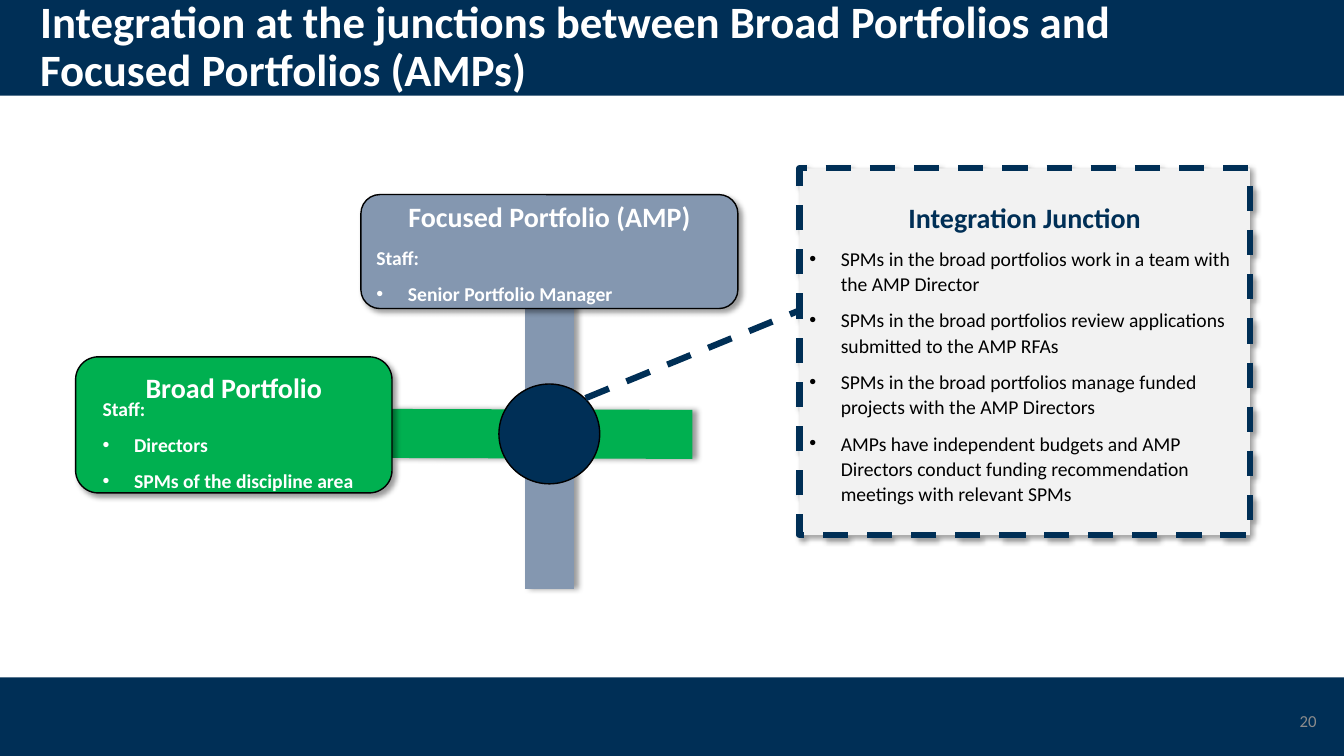
from lxml import etree
from pptx import Presentation
from pptx.dml.color import RGBColor
from pptx.enum import dml, shapes, text
from pptx.oxml import ns
from pptx.util import Pt

COLORS = {"navy": "002F56", "slate": "8497B0", "green": "00B050", "panel": "F2F2F2",
          "white": "FFFFFF", "black": "000000", "number": "8C8C8C"}
WIDTH, HEIGHT = 960, 540
FONT = "Calibri"
BANDS = [(0, 68.4), (483.84, 56.16)]
TITLE = "Integration at the junctions between Broad Portfolios and Focused Portfolios (AMPs)"
JUNCTION = ("Integration Junction", [
    "SPMs in the broad portfolios work in a team with the AMP Director",
    "SPMs in the broad portfolios review applications submitted to the AMP RFAs",
    "SPMs in the broad portfolios manage funded projects with the AMP Directors",
    "AMPs have independent budgets and AMP Directors conduct funding recommendation "
    "meetings with relevant SPMs"])
FOCUSED = ("Focused Portfolio (AMP)", ["Senior Portfolio Manager"])
BROAD = ("Broad Portfolio", ["Directors", "SPMs of the discipline area"])
ALIGN = text.PP_ALIGN
ANCHOR = text.MSO_ANCHOR
KIND = shapes.MSO_SHAPE


def color(name):
    """Return the named palette colour."""
    return RGBColor.from_string(COLORS[name])


def set_effects(shape, direction=None):
    """Replace inherited effects with none, or with a soft shadow."""
    effects = etree.SubElement(shape._element.spPr, ns.qn("a:effectLst"))
    if direction is not None:
        shadow = etree.SubElement(effects, ns.qn("a:outerShdw"), blurRad=str(Pt(4)),
                                  dist=str(Pt(3)), dir=str(direction * 60000),
                                  algn="tl", rotWithShape="0")
        tint = etree.SubElement(shadow, ns.qn("a:srgbClr"), val=COLORS["black"])
        etree.SubElement(tint, ns.qn("a:alpha"), val="40000")


def set_line(shape, name, width, dashed=False):
    """Style the outline of a shape or a connector."""
    shape.line.color.rgb = color(name)
    shape.line.width = Pt(width)
    if dashed:
        shape.line.dash_style = dml.MSO_LINE.DASH


def add_block(parent, kind, box, fill, line=None, shadow=None):
    """Add a filled shape; line holds colour, width and dash flag."""
    shape = parent.shapes.add_shape(kind, *map(Pt, box))
    shape.fill.solid()
    shape.fill.fore_color.rgb = color(fill)
    if line:
        set_line(shape, *line)
    else:
        shape.line.fill.background()
    set_effects(shape, shadow)
    return shape


def add_line(slide, start, end, line, shadow=None):
    """Add a straight connector between two points."""
    connector = slide.shapes.add_connector(shapes.MSO_CONNECTOR.STRAIGHT,
                                           *map(Pt, start + end))
    set_line(connector, *line)
    set_effects(connector, shadow)


def write(shape, words, size=14, ink="white", bold=True, align=ALIGN.LEFT,
          anchor=ANCHOR.MIDDLE, spacing=1.07, after=8, bullet=False):
    """Append one formatted paragraph to a shape."""
    frame = shape.text_frame
    frame.word_wrap = True
    frame.vertical_anchor = anchor
    paragraph = frame.paragraphs[0]
    if paragraph.runs:
        paragraph = frame.add_paragraph()
    paragraph.alignment = align
    paragraph.line_spacing = spacing
    paragraph.space_after = Pt(after)
    if bullet:
        properties = paragraph._p.get_or_add_pPr()
        properties.set("marL", str(Pt(22.5)))
        properties.set("indent", str(Pt(-22.5)))
        etree.SubElement(properties, ns.qn("a:buFont"), typeface="Arial")
        etree.SubElement(properties, ns.qn("a:buChar"), char="•")
    run = paragraph.add_run()
    run.text = words
    run.font.name = FONT
    run.font.size = Pt(size)
    run.font.bold = bold
    run.font.color.rgb = color(ink)


def write_staff(shape, members, **layout):
    """Write the staff label and its bulleted members."""
    write(shape, "Staff:", **layout)
    for member in members:
        write(shape, member, bullet=True, **layout)


def build():
    """Build the slide and save it."""
    presentation = Presentation()
    presentation.slide_width, presentation.slide_height = Pt(WIDTH), Pt(HEIGHT)
    slide = presentation.slides.add_slide(presentation.slide_layouts[6])
    for top, height in BANDS:
        add_block(slide, KIND.RECTANGLE, (0, top, WIDTH, height), "navy")
    title = slide.shapes.add_textbox(*map(Pt, (21.6, 0, 828, 69)))
    write(title, TITLE, size=32, spacing=0.9, after=0)
    number = slide.shapes.add_textbox(*map(Pt, (731.5, 500.4, 216, 28.8)))
    write(number, "20", size=12, ink="number", bold=False, align=ALIGN.RIGHT,
          spacing=1, after=0)

    heading, points = JUNCTION
    junction = add_block(slide, KIND.RECTANGLE, (571, 120.2, 321.8, 262), "panel",
                         ("navy", 4.5, True), shadow=45)
    write(junction, heading, size=20, ink="navy", align=ALIGN.CENTER)
    for point in points:
        write(junction, point, ink="black", bold=False, bullet=True)

    outline = ("black", 1)
    add_line(slide, (392.6, 182.2), (392.6, 420.5), ("slate", 35), shadow=0)
    heading, members = FOCUSED
    focused = add_block(slide, KIND.ROUNDED_RECTANGLE, (257.8, 139, 269.3, 81.4), "slate",
                        outline, shadow=45)
    write(focused, heading, size=20, align=ALIGN.CENTER)
    write_staff(focused, members)

    add_line(slide, (280, 309.6), (494.6, 310.3), ("green", 35), shadow=0)
    heading, members = BROAD
    group = slide.shapes.add_group_shape()
    broad = add_block(group, KIND.ROUNDED_RECTANGLE, (54, 254.9, 226, 97.2), "green",
                      outline, shadow=45)
    write(broad, heading, size=20, align=ALIGN.CENTER, anchor=ANCHOR.TOP)
    staff = group.shapes.add_textbox(*map(Pt, (66.2, 278.6, 194.4, 86.4)))
    write_staff(staff, members, anchor=ANCHOR.TOP)

    add_block(slide, KIND.OVAL, (356.4, 274.3, 72, 71.3), "navy", outline)
    add_line(slide, (418.3, 284.4), (571, 221.8), ("navy", 4.5, True))
    presentation.save("out.pptx")


if __name__ == "__main__":
    build()
